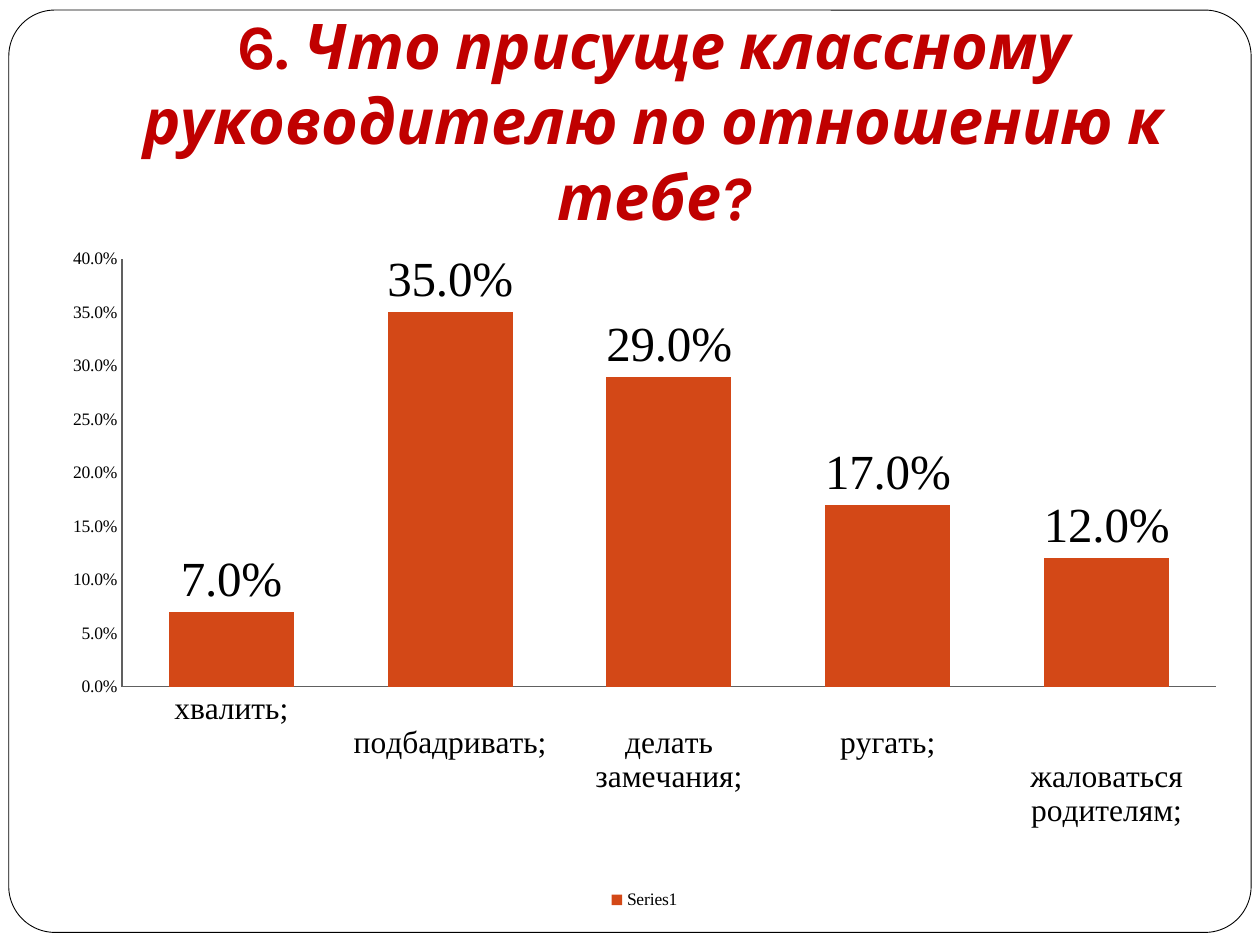
import pptx
import pptx.chart.data
import pptx.dml.color
import pptx.enum.chart
import pptx.enum.shapes
import pptx.enum.text
import pptx.util
from pptx.util import Inches

RED = pptx.dml.color.RGBColor(0xC0, 0x00, 0x00)
ORANGE = pptx.dml.color.RGBColor(0xD3, 0x48, 0x17)
BLACK = pptx.dml.color.RGBColor(0x00, 0x00, 0x00)
WHITE = pptx.dml.color.RGBColor(0xFF, 0xFF, 0xFF)
GRAY = pptx.dml.color.RGBColor(0x60, 0x60, 0x60)

ANSWERS = {
    "хвалить;\n": 0.07,
    "\nподбадривать;\n": 0.35,
    "\nделать замечания;\n\n": 0.29,
    "\nругать;\n\n": 0.17,
    "\n\nжаловаться родителям;": 0.12,
}


def add_frame(s, x, y, w, h):
    """Draw the rounded border of the slide."""
    sp = s.shapes.add_shape(
        pptx.enum.shapes.MSO_SHAPE.ROUNDED_RECTANGLE, x, y, w, h)
    sp.adjustments[0] = 0.05
    sp.shadow.inherit = False
    sp.fill.solid()
    sp.fill.fore_color.rgb = WHITE
    sp.line.color.rgb = BLACK
    sp.line.width = pptx.util.Pt(0.5)


def add_title(s, x, y, w, h, number, question):
    """Write the numbered question, with the question in italics."""
    tf = s.shapes.add_textbox(x, y, w, h).text_frame
    tf.word_wrap = True
    tf.vertical_anchor = pptx.enum.text.MSO_ANCHOR.BOTTOM
    tf.margin_bottom = Inches(0.1)
    p = tf.paragraphs[0]
    p.alignment = pptx.enum.text.PP_ALIGN.CENTER
    for text, italic in ((number, False), (question, True)):
        r = p.add_run()
        r.text = text
        r.font.name = "Karla"
        r.font.size = pptx.util.Pt(36)
        r.font.bold = True
        r.font.italic = italic
        r.font.color.rgb = RED


def add_answer_chart(s, x, y, w, h, answers):
    """Plot the share of each answer as columns."""
    data = pptx.chart.data.CategoryChartData(number_format="0.0%")
    data.categories = list(answers)
    data.add_series("Series1", list(answers.values()))
    chart = s.shapes.add_chart(
        pptx.enum.chart.XL_CHART_TYPE.COLUMN_CLUSTERED, x, y, w, h, data).chart
    chart.font.name = "Times New Roman"
    chart.font.size = pptx.util.Pt(10)
    chart.font.color.rgb = BLACK
    chart.has_title = False
    chart.has_legend = True
    chart.legend.position = pptx.enum.chart.XL_LEGEND_POSITION.BOTTOM
    chart.legend.include_in_layout = False

    for axis in (chart.category_axis, chart.value_axis):
        axis.major_tick_mark = pptx.enum.chart.XL_TICK_MARK.NONE
        axis.has_major_gridlines = False
        axis.format.line.color.rgb = GRAY
    chart.category_axis.tick_labels.font.size = pptx.util.Pt(18)
    labels = chart.value_axis.tick_labels
    labels.number_format = "0.0%"
    labels.number_format_is_linked = False

    plot = chart.plots[0]
    plot.gap_width = 75
    plot.vary_by_categories = False
    series = plot.series[0]
    series.format.fill.solid()
    series.format.fill.fore_color.rgb = ORANGE
    labels = series.data_labels
    labels.show_value = True
    labels.number_format = "0.0%"
    labels.number_format_is_linked = False
    labels.position = pptx.enum.chart.XL_LABEL_POSITION.OUTSIDE_END
    labels.font.size = pptx.util.Pt(28)


def main():
    """Build and save the survey slide."""
    prs = pptx.Presentation()
    prs.slide_width = Inches(10)
    prs.slide_height = Inches(7.5)
    s = prs.slides.add_slide(prs.slide_layouts[6])
    add_frame(s, Inches(0.07), Inches(0.08), Inches(9.86), Inches(7.32))
    add_title(s, Inches(0.94), Inches(0.7), Inches(8.5), Inches(1.25),
              "6. ", "Что присуще классному руководителю по отношению к тебе?")
    add_answer_chart(s, Inches(0.39), Inches(1.87), Inches(9.45), Inches(5.39),
                     ANSWERS)
    prs.save("out.pptx")


if __name__ == "__main__":
    main()
